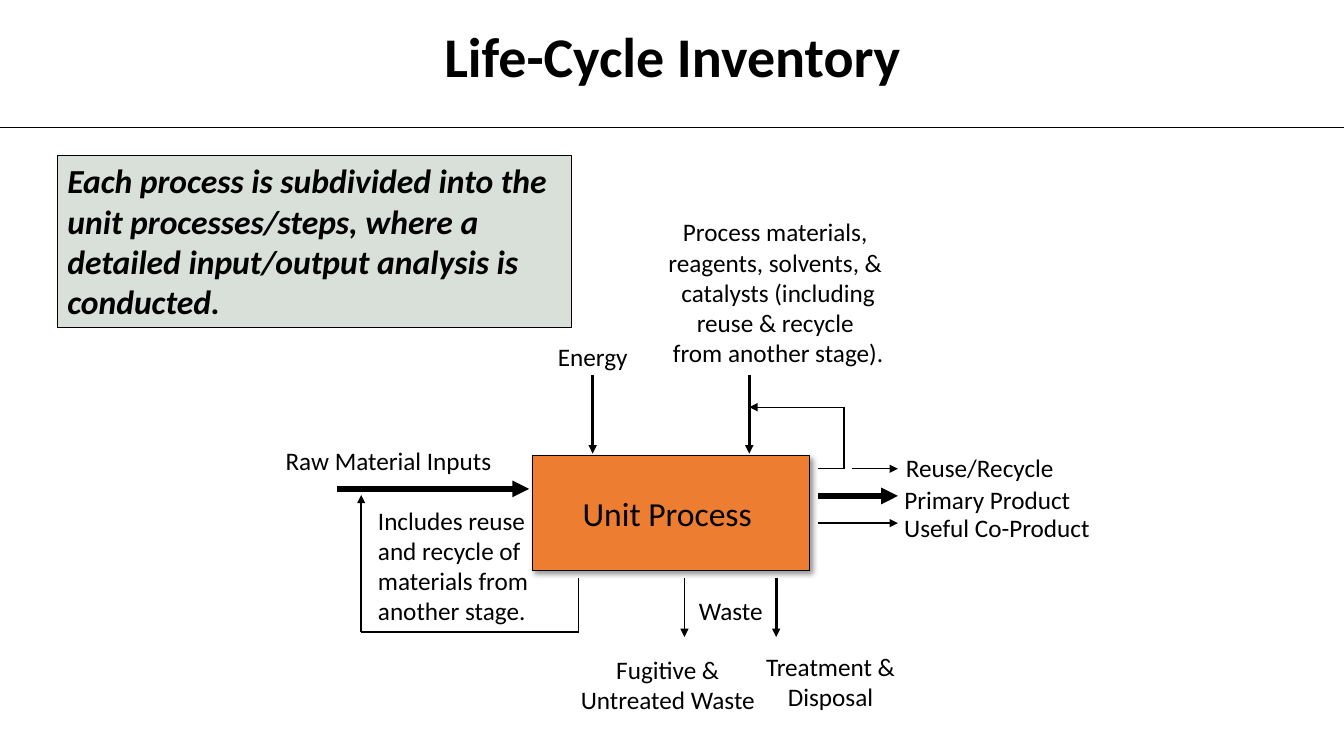
from lxml import etree
from pptx import Presentation
from pptx.dml.color import RGBColor
from pptx.enum.shapes import MSO_CONNECTOR, MSO_SHAPE
from pptx.enum.text import MSO_ANCHOR, MSO_AUTO_SIZE, PP_ALIGN
from pptx.oxml.ns import qn
from pptx.util import Inches, Pt

STRAIGHT = MSO_CONNECTOR.STRAIGHT
RECTANGLE = MSO_SHAPE.RECTANGLE
TOP = MSO_ANCHOR.TOP
GROW = MSO_AUTO_SIZE.SHAPE_TO_FIT_TEXT
LEFT, CENTER = PP_ALIGN.LEFT, PP_ALIGN.CENTER

WIDTH, HEIGHT = Inches(13.333), Inches(7.5)
COLUMNS, ROWS = 160, 90
FONT = "Calibri"
COLORS = {"ink": "000000", "process": "ED7D31", "note": "003300"}

ABOVE_TOP, ABOVE_END = 44.64, 54
BELOW_TOP, BELOW_END = 68.8, 75.84
OUT_START, OUT_END = 97.4, 106.9
REUSE_ROW, PRODUCT_ROW, COPRODUCT_ROW = 55.8, 59.04, 62.28
MATERIALS_COL, RECYCLE_COL, RECYCLE_ROW = 89.2, 100.5, 48.48
RAW_ROW, RETURN_COL, RETURN_START, RETURN_ROW = 58.2, 43, 68.88, 75.24

FLOWS = [
    (70.56, ABOVE_TOP, 70.56, ABOVE_END, 2, True),
    (MATERIALS_COL, ABOVE_TOP, MATERIALS_COL, ABOVE_END, 2, True),
    (40.08, RAW_ROW, 63, RAW_ROW, 4, True),
    (OUT_START, PRODUCT_ROW, OUT_END, PRODUCT_ROW, 4, True),
    (OUT_START, COPRODUCT_ROW, OUT_END, COPRODUCT_ROW, 1, True),
    (101.4, REUSE_ROW, OUT_END, REUSE_ROW, 1, True),
    (81.48, BELOW_TOP, 81.48, BELOW_END, 1, True),
    (92.4, BELOW_TOP, 92.4, BELOW_END, 2, True),
    (OUT_START, REUSE_ROW, RECYCLE_COL, REUSE_ROW, 1, False),
    (RECYCLE_COL, REUSE_ROW, RECYCLE_COL, RECYCLE_ROW, 1, False),
    (RECYCLE_COL, RECYCLE_ROW, MATERIALS_COL, RECYCLE_ROW, 1, True),
    (RETURN_START, BELOW_TOP, RETURN_START, RETURN_ROW, 1, False),
    (RETURN_START, RETURN_ROW, RETURN_COL, RETURN_ROW, 1, False),
    (RETURN_COL, RETURN_ROW, RETURN_COL, 58.92, 1, True),
]

LABELS = [
    (["Energy"], (65.4, 40.2, 10.32, 4.56), CENTER),
    (["Raw Material Inputs"], (32.88, 52.56, 26.76, 4.56), CENTER),
    (["Includes reuse", "and recycle of", "materials from", "another stage."],
     (44.04, 59.64, 20.04, 15.48), LEFT),
    (["Fugitive &", "Untreated Waste"], (68.04, 77.4, 22.92, 8.28), CENTER),
    (["Treatment &", "Disposal"], (90.12, 77.04, 17.52, 8.28), CENTER),
    (["Waste"], (81.96, 70.44, 10.08, 4.56), CENTER),
    (["Primary Product"], (106.56, 57.12, 21.96, 4.56), CENTER),
    (["Useful Co-Product"], (106.56, 60.48, 24.24, 4.56), CENTER),
    (["Reuse/Recycle"], (106.44, 53.4, 20.4, 4.56), CENTER),
    (["Process materials, ", "reagents, solvents, & ", "catalysts (including",
      "reuse & recycle ", "from another stage)."], (78.48, 25.32, 28.32, 19.2), CENTER),
]


def col(count):
    return round(WIDTH * count / COLUMNS)


def row(count):
    return round(HEIGHT * count / ROWS)


def area(cells):
    left, top, width, height = cells
    return col(left), row(top), col(width), row(height)


def color(name):
    return RGBColor.from_string(COLORS[name])


def write(frame, lines, size, align, wrap, insets, bold=False, italic=False):
    frame.word_wrap = wrap
    frame.auto_size = GROW
    frame.vertical_anchor = TOP
    frame.margin_left = frame.margin_right = Inches(insets[0])
    frame.margin_top = frame.margin_bottom = Inches(insets[1])
    frame.text = "\n".join(lines)
    for paragraph in frame.paragraphs:
        paragraph.alignment = align
        font = paragraph.font
        font.name, font.size = FONT, Pt(size)
        font.bold, font.italic = bold, italic
        font.color.rgb = color("ink")


def add_label(slide, lines, cells, align=CENTER, size=18):
    label = slide.shapes.add_textbox(*area(cells))
    write(label.text_frame, lines, size, align, False, (0.08, 0.04))


def add_panel(slide, cells, fill):
    panel = slide.shapes.add_shape(RECTANGLE, *area(cells))
    panel.shadow.inherit = False
    panel.fill.solid()
    panel.fill.fore_color.rgb = color(fill)
    panel.line.color.rgb = color("ink")
    panel.line.width = Pt(1)
    return panel


def set_alpha(fill_color, percent):
    etree.SubElement(fill_color, qn("a:alpha"), val=str(percent * 1000))


def cast_shadow(panel):
    effects = panel._element.spPr.find(qn("a:effectLst"))
    shadow = etree.SubElement(effects, qn("a:outerShdw"), blurRad=str(Pt(4)),
                              dist=str(Pt(3)), dir=str(45 * 60000),
                              algn="tl", rotWithShape="0")
    shade = etree.SubElement(shadow, qn("a:srgbClr"), val=COLORS["ink"])
    set_alpha(shade, 40)


def add_flow(slide, x1, y1, x2, y2, weight, arrow):
    flow = slide.shapes.add_connector(STRAIGHT, col(x1), row(y1), col(x2), row(y2))
    flow.line.color.rgb = color("ink")
    flow.line.width = Pt(weight)
    if arrow:
        etree.SubElement(flow.line._get_or_add_ln(), qn("a:tailEnd"), type="triangle")
    etree.SubElement(flow._element.spPr, qn("a:effectLst"))


def add_title(slide, text):
    title = slide.shapes.add_textbox(*area((33.96, 2.88, 92.16, 8.52)))
    write(title.text_frame, [text], 40, CENTER, True, (0.1, 0.05), bold=True)
    title.text_frame.paragraphs[0].line_spacing = 0.9
    add_flow(slide, 0, 15.12, COLUMNS, 15.12, 0.5, False)


def add_note(slide, text):
    note = add_panel(slide, (6.84, 18.48, 61.2, 20.52), "note")
    set_alpha(note._element.spPr.find(qn("a:solidFill"))[0], 15)
    write(note.text_frame, [text], 24, LEFT, True, (0.1, 0.05), bold=True, italic=True)


def main():
    deck = Presentation()
    deck.slide_width, deck.slide_height = WIDTH, HEIGHT
    slide = deck.slides.add_slide(deck.slide_layouts[6])

    cast_shadow(add_panel(slide, (63.36, 54.24, 33, 13.68), "process"))
    for flow in FLOWS:
        add_flow(slide, *flow)
    add_label(slide, ["Unit Process"], (68.28, 58.2, 22.32, 5.76), size=24)
    for lines, cells, align in LABELS:
        add_label(slide, lines, cells, align)
    add_note(slide, "Each process is subdivided into the unit processes/steps, "
                    "where a detailed input/output analysis is conducted.")
    add_title(slide, "Life-Cycle Inventory")
    deck.save("out.pptx")


if __name__ == "__main__":
    main()
